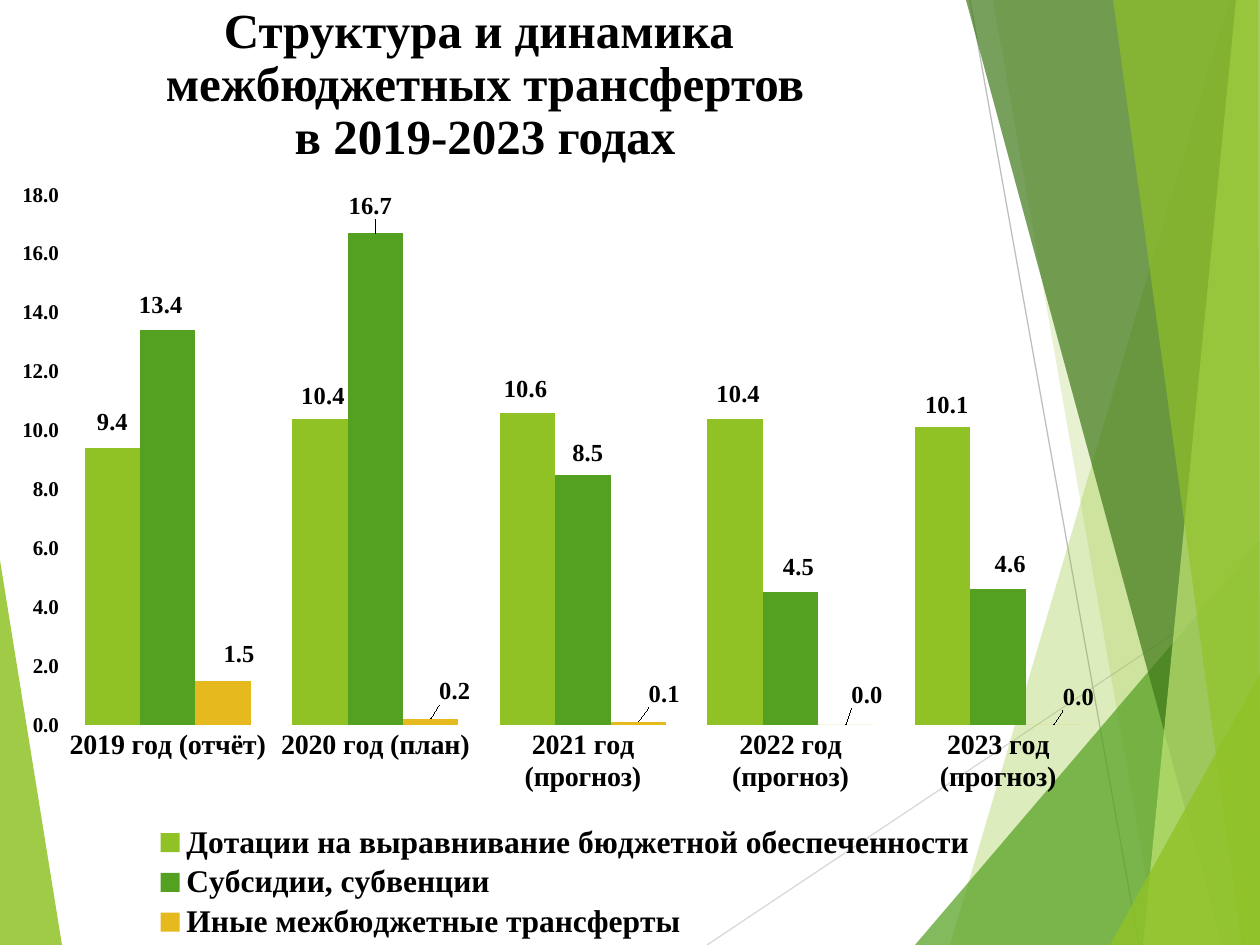
from dataclasses import dataclass

from lxml import etree
from pptx import Presentation
from pptx.chart.data import CategoryChartData
from pptx.dml.color import RGBColor
from pptx.enum.chart import XL_CHART_TYPE, XL_LABEL_POSITION, XL_LEGEND_POSITION, XL_TICK_MARK
from pptx.enum.shapes import MSO_CONNECTOR
from pptx.enum.text import MSO_ANCHOR, MSO_AUTO_SIZE, PP_ALIGN
from pptx.oxml.ns import qn
from pptx.util import Pt

COLUMNS = XL_CHART_TYPE.COLUMN_CLUSTERED
OUTSIDE = XL_LABEL_POSITION.OUTSIDE_END
BOTTOM = XL_LEGEND_POSITION.BOTTOM
NO_TICK = XL_TICK_MARK.NONE
STRAIGHT = MSO_CONNECTOR.STRAIGHT
CENTER = PP_ALIGN.CENTER
TOP = MSO_ANCHOR.TOP
NO_AUTOFIT = MSO_AUTO_SIZE.NONE

EMU_PER_PX = 914400 / 126
SLIDE_W, SLIDE_H = 1260, 945


@dataclass(frozen=True)
class Theme:
    font: str = "Times New Roman"
    chart_font: str = "Lato"
    text: str = "000000"
    lime: str = "90C226"
    green: str = "54A021"
    dark_green: str = "3F7819"
    pale_lime: str = "C0E474"
    gold: str = "E6B91E"
    light_ray: str = "D9D9D9"
    dark_ray: str = "BFBFBF"
    title_size: int = 28
    legend_size: int = 18
    category_size: int = 16
    label_size: int = 14
    value_size: int = 12
    chart_size: int = 10
    ray_width: float = 0.75


THEME = Theme()

TITLE_LINES = ["Структура и динамика ", "межбюджетных трансфертов", "в 2019-2023 годах"]
YEARS = ["2019 год (отчёт)", "2020 год (план)", "2021 год (прогноз)",
         "2022 год (прогноз)", "2023 год (прогноз)"]
# name, colour, values, label shifts in px from the place above the column
TRANSFERS = [
    ("Дотации на выравнивание бюджетной обеспеченности", THEME.lime,
     [9.4, 10.4, 10.6, 10.4, 10.1],
     [(0, -7), (3, -4), (-2, -5), (3, -6), (4, -4)]),
    ("Субсидии, субвенции", THEME.green,
     [13.4, 16.7, 8.5, 4.5, 4.6],
     [(-7, -7), (-5, -9), (5, -3), (8, -7), (12, -7)]),
    ("Иные межбюджетные трансферты", THEME.gold,
     [1.5, 0.2, 0.1, 0, 0],
     [(16, -8), (24, -9), (26, -9), (21, -11), (25, -9)]),
]

RAYS = [
    ((707, 945), (1260, 576), THEME.light_ray),
    ((970, 0), (1139, 945), THEME.dark_ray),
]
# corners, colour, opacity in percent
FACETS = [
    ([(0, 560), (62, 945), (0, 945)], THEME.lime, 85),
    ([(1229, 0), (950, 945), (1260, 945), (1260, 0)], THEME.lime, 30),
    ([(993, 0), (1158, 945), (1260, 945), (1260, 0)], THEME.lime, 20),
    ([(915, 945), (1260, 541), (1260, 945)], THEME.green, 72),
    ([(966, 0), (1222, 945), (1260, 945), (1260, 0)], THEME.dark_green, 70),
    ([(1236, 0), (1143, 945), (1260, 945), (1260, 0)], THEME.pale_lime, 70),
    ([(1113, 0), (1242, 945), (1260, 945), (1258, 0)], THEME.lime, 65),
    ([(1110, 945), (1260, 674), (1260, 945)], THEME.lime, 80),
]


def px(length):
    return round(length * EMU_PER_PX)


def rgb(color):
    return RGBColor.from_string(color)


def style_font(font, size, name=THEME.font, bold=True):
    font.size, font.name, font.bold = Pt(size), name, bold
    font.color.rgb = rgb(THEME.text)


def add_ray(slide, start, end, color):
    ray = slide.shapes.add_connector(STRAIGHT, *map(px, start + end))
    ray.line.color.rgb = rgb(color)
    ray.line.width = Pt(THEME.ray_width)
    etree.SubElement(ray._element.spPr, qn("a:effectLst"))


def add_facet(slide, corners, color, opacity):
    points = [(px(x), px(y)) for x, y in corners]
    builder = slide.shapes.build_freeform(*points[0])
    builder.add_line_segments(points[1:], close=True)
    facet = builder.convert_to_shape()
    facet.shadow.inherit = False
    facet.line.fill.background()
    facet.fill.solid()
    facet.fill.fore_color.rgb = rgb(color)
    tint = facet._element.spPr.find(qn("a:solidFill"))[0]
    etree.SubElement(tint, qn("a:alpha"), val=str(opacity * 1000))


def add_backdrop(slide):
    add_facet(slide, *FACETS[0])
    for ray in RAYS:
        add_ray(slide, *ray)
    for facet in FACETS[1:]:
        add_facet(slide, *facet)


def fill_title(slide, box):
    title = slide.shapes.title
    title.left, title.top, title.width, title.height = map(px, box)
    title.element.getparent().append(title.element)  # in front of the backdrop
    frame = title.text_frame
    frame.word_wrap, frame.auto_size, frame.vertical_anchor = True, NO_AUTOFIT, TOP
    paragraph = frame.paragraphs[0]
    paragraph.alignment, paragraph.line_spacing = CENTER, 0.9
    for index, line in enumerate(TITLE_LINES):
        if index:
            paragraph.add_line_break()
        run = paragraph.add_run()
        run.text = line
        style_font(run.font, THEME.title_size)


def make_layout(inner=False, **fractions):
    """Return a c:layout element; fractions are shares of the chart's size."""
    layout = etree.Element(qn("c:layout"))
    manual = etree.SubElement(layout, qn("c:manualLayout"))
    if inner:
        etree.SubElement(manual, qn("c:layoutTarget"), val="inner")
    if "w" in fractions:
        for mode in ("xMode", "yMode"):
            etree.SubElement(manual, qn(f"c:{mode}"), val="edge")
    for key, share in fractions.items():
        etree.SubElement(manual, qn(f"c:{key}"), val=f"{share:.4f}")
    return layout


def place_part(part, chart_box, box, inner=False):
    """Fix a chart part at a px box measured from the chart's corner."""
    for old in part.findall(qn("c:layout")):
        part.remove(old)
    width, height = chart_box[2:]
    x, y, w, h = box
    layout = make_layout(inner, x=x / width, y=y / height, w=w / width, h=h / height)
    part.insert(0 if inner else 1, layout)


def style_axis(axis, size):
    axis.major_tick_mark = axis.minor_tick_mark = NO_TICK
    axis.has_major_gridlines = False
    axis.format.line.fill.background()
    style_font(axis.tick_labels.font, size)


def style_series(series, color, shifts, chart_box):
    series.format.fill.solid()
    series.format.fill.fore_color.rgb = rgb(color)
    series.invert_if_negative = False
    labels = series.data_labels
    labels.show_value, labels.position = True, OUTSIDE
    labels.number_format, labels.number_format_is_linked = "0.0", False
    style_font(labels.font, THEME.label_size)
    for index in range(len(shifts)):
        label = series.points[index].data_label
        style_font(label.font, THEME.label_size)
        label.position = OUTSIDE
    width, height = chart_box[2:]
    for entry, (dx, dy) in zip(series._element.iter(qn("c:dLbl")), shifts):
        entry.insert(1, make_layout(x=dx / width, y=dy / height))


def add_transfers_chart(slide, box):
    data = CategoryChartData(number_format="0.0")
    data.categories = YEARS
    for name, _, values, _ in TRANSFERS:
        data.add_series(name, values)
    chart = slide.shapes.add_chart(COLUMNS, *map(px, box), data).chart
    style_font(chart.font, THEME.chart_size, THEME.chart_font, bold=False)
    chart.has_title = False
    plot = chart.plots[0]
    plot.gap_width, plot.overlap, plot.vary_by_categories = 75, 0, False
    for series, (_, color, _, shifts) in zip(plot.series, TRANSFERS):
        style_series(series, color, shifts, box)

    style_axis(chart.category_axis, THEME.category_size)
    amounts = chart.value_axis
    style_axis(amounts, THEME.value_size)
    amounts.minimum_scale, amounts.maximum_scale, amounts.major_unit = 0, 18, 2
    amounts.tick_labels.number_format = "0.0"
    amounts.tick_labels.number_format_is_linked = False

    chart.has_legend = True
    chart.legend.position, chart.legend.include_in_layout = BOTTOM, False
    style_font(chart.legend.font, THEME.legend_size)
    plot_area = chart._chartSpace.find(".//" + qn("c:plotArea"))
    place_part(plot_area, box, (64, 27, 1038, 530), inner=True)
    place_part(chart.legend._element, box, (150, 652, 830, 125))


def main():
    deck = Presentation()
    deck.slide_width, deck.slide_height = px(SLIDE_W), px(SLIDE_H)
    slide = deck.slides.add_slide(deck.slide_layouts[5])
    add_backdrop(slide)
    fill_title(slide, (0, 0, 970, 150))
    add_transfers_chart(slide, (0, 168, 1125, 777))
    deck.save("out.pptx")


if __name__ == "__main__":
    main()
